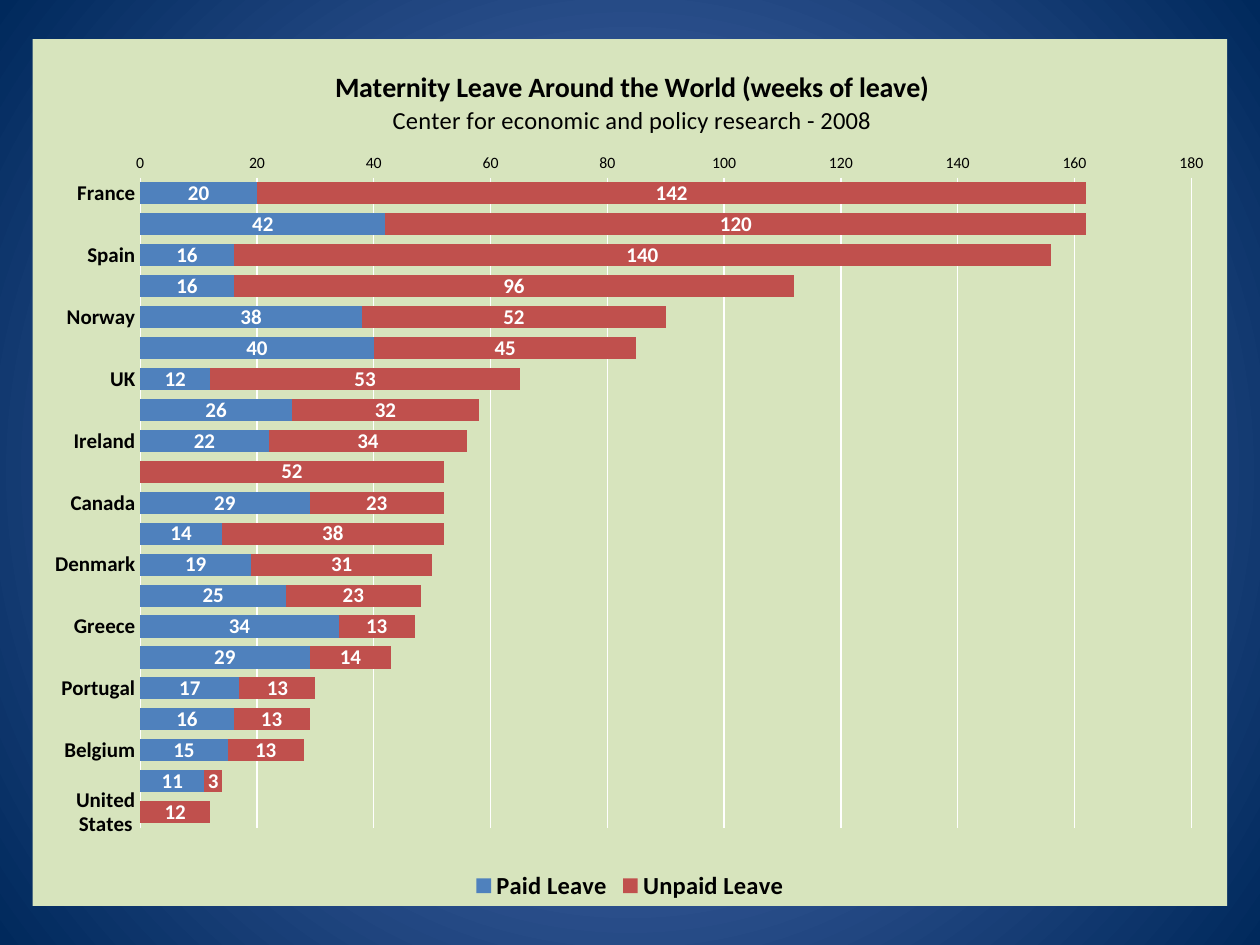
from dataclasses import dataclass

from lxml.etree import SubElement
from pptx import Presentation
from pptx.chart.data import CategoryChartData
from pptx.dml.color import RGBColor
from pptx.enum.chart import XL_CHART_TYPE as ChartType
from pptx.enum.chart import XL_LEGEND_POSITION as LegendPosition
from pptx.enum.chart import XL_TICK_MARK as TickMark
from pptx.oxml import parse_xml
from pptx.oxml.ns import nsdecls, qn
from pptx.util import Inches, Pt


@dataclass(frozen=True)
class Theme:
    font: str = "Calibri"
    glow: str = "5E7CC5"
    navy: str = "00295C"
    panel: str = "D7E4BD"
    paid: str = "4F81BD"
    unpaid: str = "C0504D"
    ink: str = "000000"
    white: str = "FFFFFF"
    title: float = 16
    subtitle: float = 14
    legend: float = 14
    label: float = 12
    base: float = 10
    tick: float = 9
    line: float = 0.75


THEME = Theme()
SLIDE_W, SLIDE_H = Inches(10), Inches(7.5)

# Country, paid weeks, unpaid weeks
LEAVE = [
    ("France", 20, 142), ("Germany", 42, 120), ("Spain", 16, 140),
    ("Austria", 16, 96), ("Norway", 38, 52), ("Sweden", 40, 45),
    ("UK", 12, 53), ("Japan", 26, 32), ("Ireland", 22, 34),
    ("Australia", None, 52), ("Canada", 29, 23), ("New Zealand", 14, 38),
    ("Denmark", 19, 31), ("Italy", 25, 23), ("Greece", 34, 13),
    ("Finland", 29, 14), ("Portugal", 17, 13), ("Netherlands", 16, 13),
    ("Belgium", 15, 13), ("Switzerland", 11, 3), ("United States", None, 12),
]


def rgb(color):
    return RGBColor.from_string(color)


def style_font(font, size, color, bold=False):
    font.name, font.size, font.bold = THEME.font, Pt(size), bold
    font.color.rgb = rgb(color)


def style_line(line, color):
    line.color.rgb = rgb(color)
    line.width = Pt(THEME.line)


def set_layout(parent, position, **shares):
    """Place a chart part by shares of the chart's size."""
    for old in parent.findall(qn("c:layout")):
        parent.remove(old)
    layout = parse_xml(f"<c:layout {nsdecls('c')}/>")
    parent.insert(position, layout)
    manual = SubElement(layout, qn("c:manualLayout"))
    if "w" in shares:
        SubElement(manual, qn("c:layoutTarget"), val="inner")
    for side in ("x", "y"):
        SubElement(manual, qn(f"c:{side}Mode"), val="edge")
    for side, share in shares.items():
        SubElement(manual, qn(f"c:{side}"), val=str(share))


def paint_background(slide):
    fill = slide.background.fill
    fill.gradient()
    for stop, color, position in zip(fill.gradient_stops,
                                     (THEME.glow, THEME.navy), (0, 1)):
        stop.color.rgb = rgb(color)
        stop.position = position
    # Radiate from the centre instead of along a line
    linear = slide.element.find(".//" + qn("a:lin"))
    radial = parse_xml(
        f'<a:path {nsdecls("a")} path="circle">'
        '<a:fillToRect l="50000" t="50000" r="50000" b="50000"/></a:path>')
    linear.getparent().replace(linear, radial)


def add_leave_chart(slide):
    countries, paid, unpaid = zip(*LEAVE)
    weeks = CategoryChartData()
    weeks.categories = countries
    weeks.add_series("Paid Leave", paid)
    weeks.add_series("Unpaid Leave", unpaid)
    frame = slide.shapes.add_chart(
        ChartType.BAR_STACKED, Inches(0.26), Inches(0.31),
        Inches(9.48), Inches(6.88), weeks)
    return frame.chart


def style_panel(chart):
    style_font(chart.font, THEME.base, THEME.white)
    panel = parse_xml(
        f'<c:spPr {nsdecls("c", "a")}><a:solidFill><a:srgbClr val="{THEME.panel}"/>'
        '</a:solidFill><a:ln><a:noFill/></a:ln></c:spPr>')
    chart.element.find(qn("c:chart")).addnext(panel)
    plot_area = chart.element.find(".//" + qn("c:plotArea"))
    set_layout(plot_area, 0, x=0.09, y=0.16, w=0.88, h=0.75)


def add_titles(chart):
    heading = chart.chart_title
    text = heading.text_frame
    lines = [
        ("Maternity Leave Around the World (weeks of leave)", THEME.title, True),
        ("Center for economic and policy research - 2008", THEME.subtitle, False),
    ]
    for index, (words, size, bold) in enumerate(lines):
        paragraph = text.add_paragraph() if index else text.paragraphs[0]
        run = paragraph.add_run()
        run.text = words
        style_font(run.font, size, THEME.ink, bold)
    heading.include_in_layout = False
    set_layout(heading.element, 1, x=0.25, y=0.03)


def style_bars(chart):
    plot = chart.plots[0]
    plot.gap_width, plot.overlap = 40, 100
    plot.vary_by_categories = False
    for series, color in zip(plot.series, (THEME.paid, THEME.unpaid)):
        series.format.fill.solid()
        series.format.fill.fore_color.rgb = rgb(color)
        series.invert_if_negative = False
        labels = series.data_labels
        labels.show_value = True
        style_font(labels.font, THEME.label, THEME.white, True)


def style_axes(chart):
    country_axis, week_axis = chart.category_axis, chart.value_axis
    for axis in (country_axis, week_axis):
        axis.major_tick_mark = axis.minor_tick_mark = TickMark.NONE

    # Countries run downwards, every second one named
    country_axis.reverse_order = True
    style_font(country_axis.tick_labels.font, THEME.label, THEME.ink, True)
    style_line(country_axis.format.line, THEME.white)
    skip = parse_xml(f'<c:tickLblSkip {nsdecls("c")} val="2"/>')
    chart.element.find(".//" + qn("c:noMultiLvlLbl")).addprevious(skip)

    # Weeks along the top
    week_axis.minimum_scale, week_axis.maximum_scale = 0, 180
    week_axis.major_unit = 20
    style_font(week_axis.tick_labels.font, THEME.tick, THEME.ink)
    week_axis.format.line.fill.background()
    week_axis.has_major_gridlines = True
    style_line(week_axis.major_gridlines.format.line, THEME.white)


def add_legend(chart):
    chart.has_legend = True
    chart.legend.position = LegendPosition.BOTTOM
    chart.legend.include_in_layout = False
    style_font(chart.legend.font, THEME.legend, THEME.ink, True)


def main():
    deck = Presentation()
    deck.slide_width, deck.slide_height = SLIDE_W, SLIDE_H
    slide = deck.slides.add_slide(deck.slide_layouts[6])
    paint_background(slide)

    chart = add_leave_chart(slide)
    style_panel(chart)
    add_titles(chart)
    style_bars(chart)
    style_axes(chart)
    add_legend(chart)
    deck.save("out.pptx")


if __name__ == "__main__":
    main()
